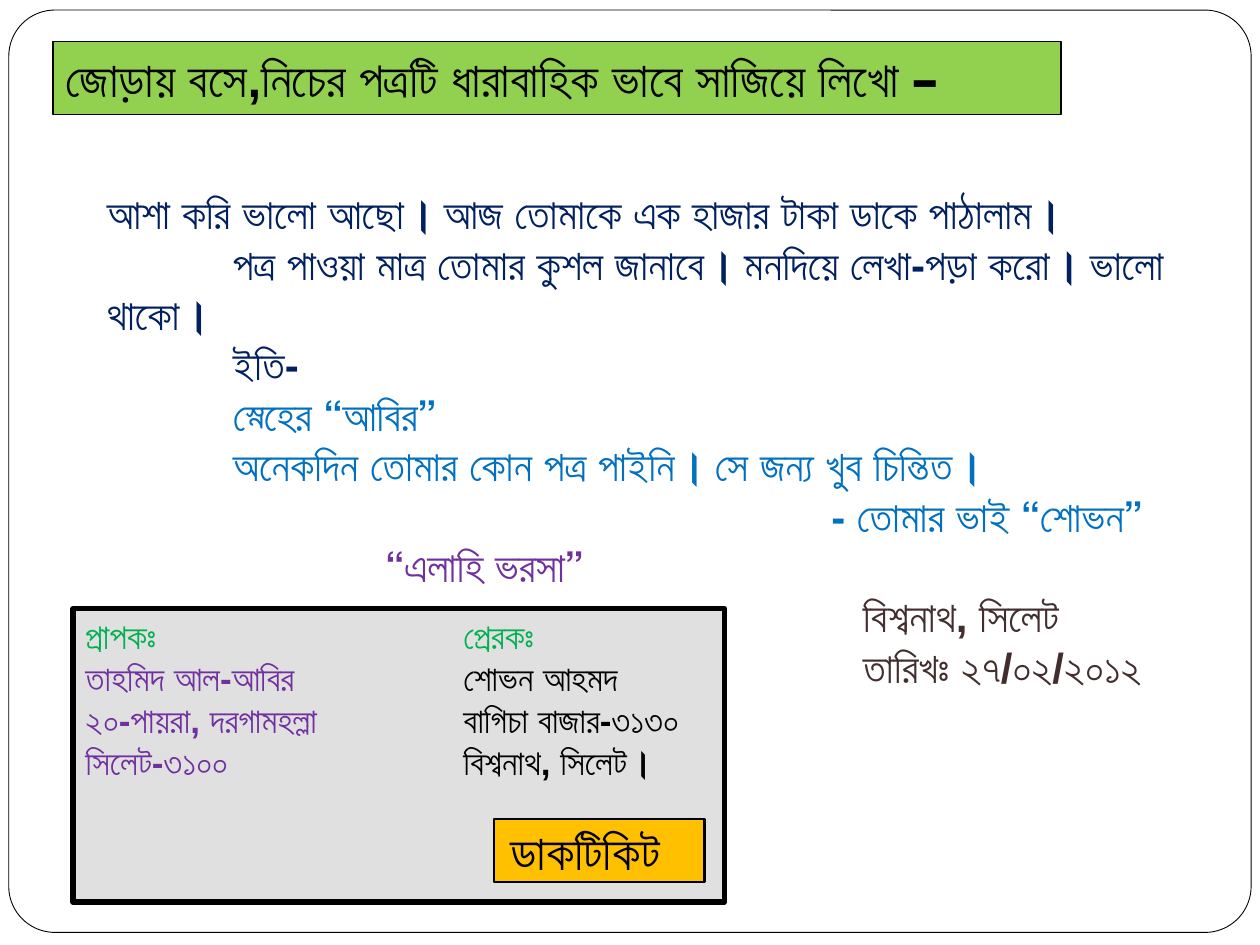
from lxml import etree
from pptx import Presentation
from pptx.dml.color import RGBColor
from pptx.enum.shapes import MSO_SHAPE as Shape
from pptx.enum.text import MSO_ANCHOR as Anchor, MSO_AUTO_SIZE as AutoSize, PP_ALIGN as Align
from pptx.oxml.ns import qn
from pptx.util import Inches, Pt

COLORS = {
    "white": "FFFFFF", "black": "000000", "banner": "92D050", "card": "E1E0E0",
    "stamp": "FFC000", "navy": "002060", "blue": "0070C0", "purple": "7030A0",
    "brown": "422E2E", "green": "00B050",
}
FONT = "Arial"

# Letter lines: text, colour, left margin, first-line indent (inches)
LETTER = [
    ("আশা করি ভালো আছো। আজ তোমাকে এক হাজার টাকা ডাকে পাঠালাম।", "navy", 0, 0),
    ("পত্র পাওয়া মাত্র তোমার কুশল জানাবে। মনদিয়ে লেখা-পড়া করো। ভালো থাকো।", "navy", 0, 1),
    ("ইতি-", "navy", 1, 0),
    ("স্নেহের “আবির”", "blue", 1, 0),
    ("অনেকদিন তোমার কোন পত্র পাইনি। সে জন্য খুব চিন্তিত।", "blue", 1, 0),
    ("- তোমার ভাই “শোভন”", "blue", 5.75, 0),
    ("“এলাহি ভরসা”", "purple", 2.21, 0),
    ("বিশ্বনাথ, সিলেট", "brown", 6, 0),
    ("তারিখঃ ২৭/০২/২০১২", "brown", 6, 0),
]

# Envelope lines: recipient and its colour, sender and its colour
ADDRESSES = [
    ("প্রাপকঃ", "green", "প্রেরকঃ", "green"),
    ("তাহমিদ আল-আবির", "purple", "শোভন আহমদ", "black"),
    ("২০-পায়রা, দরগামহল্লা", "purple", "বাগিচা বাজার-৩১৩০", "black"),
    ("সিলেট-৩১০০", "purple", "বিশ্বনাথ, সিলেট।", "black"),
]


def rgb(name):
    return RGBColor.from_string(COLORS[name])


def style_box(shape, fill, line_width):
    shape.fill.solid()
    shape.fill.fore_color.rgb = rgb(fill)
    shape.line.color.rgb = rgb("black")
    shape.line.width = Pt(line_width)
    shape.shadow.inherit = False


def add_box(page, kind, box, fill, line_width):
    shape = page.shapes.add_shape(kind, *map(Inches, box))
    style_box(shape, fill, line_width)
    return shape


def style_para(para, size, color="black"):
    para.alignment = Align.LEFT
    para.font.name = FONT
    para.font.size = Pt(size)
    para.font.bold = True
    para.font.color.rgb = rgb(color)


def paragraphs(frame, count):
    for _ in range(count - 1):
        frame.add_paragraph()
    return frame.paragraphs


def add_frame(page, box):
    frame = add_box(page, Shape.ROUNDED_RECTANGLE, box, "white", 0.5)
    frame.adjustments[0] = 0.05
    # Behind the title placeholder
    page.shapes._spTree.insert(2, frame._element)


def add_banner(page, box):
    title = page.shapes.title
    title.left, title.top, title.width, title.height = map(Inches, box)
    geometry = etree.SubElement(title._element.spPr, qn("a:prstGeom"), prst="roundRect")
    etree.SubElement(geometry, qn("a:avLst"))
    style_box(title, "banner", 1)
    frame = title.text_frame
    frame.text = "জোড়ায় বসে,নিচের পত্রটি ধারাবাহিক ভাবে সাজিয়ে লিখো –"
    frame.auto_size = AutoSize.NONE
    frame.vertical_anchor = Anchor.MIDDLE
    style_para(frame.paragraphs[0], 28)


def add_letter(page, box):
    frame = page.shapes.add_textbox(*map(Inches, box)).text_frame
    frame.word_wrap = True
    for para, (text, color, margin, indent) in zip(paragraphs(frame, len(LETTER)), LETTER):
        para.text = text
        style_para(para, 24, color)
        properties = para._p.get_or_add_pPr()
        properties.set("marL", str(Inches(margin)))
        properties.set("indent", str(Inches(indent)))


def add_envelope(page, box):
    left, top, width, height = box
    card = add_box(page, Shape.RECTANGLE, box, "card", 3)
    frame = card.text_frame
    frame.vertical_anchor = Anchor.TOP
    for para, (recipient, color, sender, sender_color) in zip(
            paragraphs(frame, len(ADDRESSES)), ADDRESSES):
        style_para(para, 20)
        # The sender column starts at a tab stop
        tabs = etree.Element(qn("a:tabLst"))
        etree.SubElement(tabs, qn("a:tab"), pos=str(Inches(3)), algn="l")
        para._p.pPr.find(qn("a:defRPr")).addprevious(tabs)
        for text, shade in ((recipient + "\t", color), (sender, sender_color)):
            span = para.add_run()
            span.text = text
            span.font.name = FONT
            span.font.size = Pt(20)
            span.font.bold = True
            span.font.color.rgb = rgb(shade)

    # Postage stamp in the lower right corner
    stamp_box = (left + width - 1.83, top + height - 0.66, 1.67, 0.5)
    stamp = add_box(page, Shape.RECTANGLE, stamp_box, "stamp", 1.5)
    frame = stamp.text_frame
    frame.text = "ডাকটিকিট"
    frame.margin_left = Inches(0.13)
    frame.vertical_anchor = Anchor.MIDDLE
    style_para(frame.paragraphs[0], 28)


def main():
    deck = Presentation()
    deck.slide_width, deck.slide_height = Inches(10), Inches(7.5)
    page = deck.slides.add_slide(deck.slide_layouts[5])
    add_frame(page, (0.07, 0.08, 9.86, 7.32))
    add_envelope(page, (0.58, 4.83, 5.17, 2.33))
    add_banner(page, (0.42, 0.33, 8, 0.58))
    add_letter(page, (0.75, 1.44, 8.67, 4.14))
    deck.save("out.pptx")


if __name__ == "__main__":
    main()
